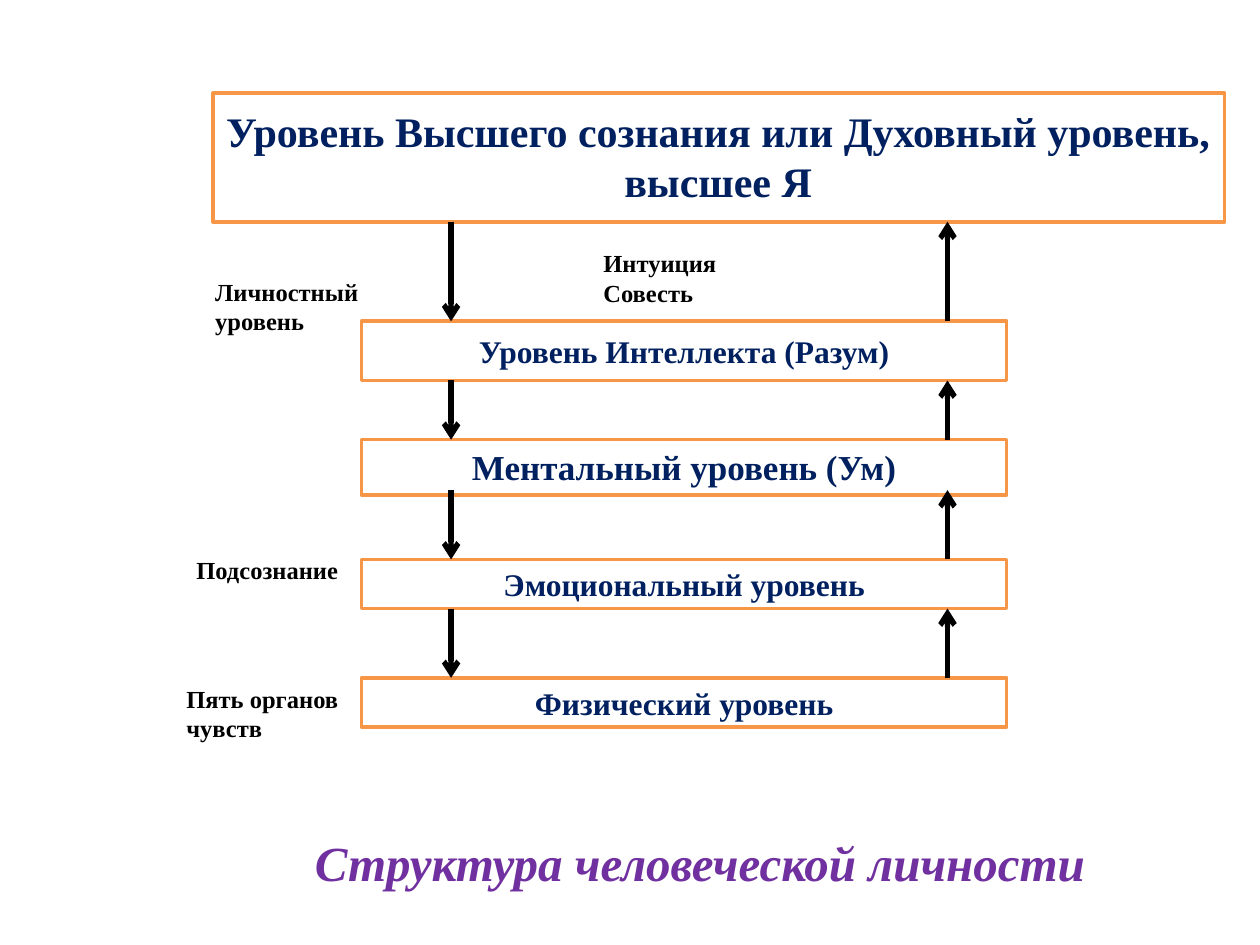
from dataclasses import dataclass

from lxml.etree import SubElement
from pptx import Presentation
from pptx.dml.color import RGBColor
from pptx.enum.shapes import MSO_CONNECTOR as Connector, MSO_SHAPE as Shape
from pptx.enum.text import MSO_ANCHOR as Anchor, PP_ALIGN as Align
from pptx.oxml.ns import qn
from pptx.util import Inches, Pt


@dataclass(frozen=True)
class Theme:
    font: str = "Times New Roman"
    navy: str = "002060"
    orange: str = "F79646"
    purple: str = "7030A0"
    black: str = "000000"
    white: str = "FFFFFF"
    heading: int = 24
    level: int = 18
    mind: int = 20
    label: int = 14
    caption: int = 28
    border: int = 2
    arrow: int = 3


theme = Theme()

# Content: lengths in inches
HEADING = "Уровень Высшего сознания или Духовный уровень, высшее Я"
HEADING_FRAME = (1.69, 0.74, 8.03, 1.02)
HEADING_TEXT = (1.2, 0.61, 9, 1.25)
CAPTION = ("Структура человеческой личности", (2.4, 6.56, 6.61, 0.57))
LEVELS = [  # text, top, height, size, anchor
    ("Уровень Интеллекта (Разум)", 2.55, 0.47, theme.level, Anchor.MIDDLE),
    ("Ментальный уровень (Ум)", 3.49, 0.44, theme.mind, Anchor.TOP),
    ("Эмоциональный уровень", 4.44, 0.39, theme.level, Anchor.MIDDLE),
    ("Физический уровень", 5.38, 0.39, theme.level, Anchor.MIDDLE),
]
LABELS = [
    ("Личностный уровень", (1.61, 2.15, 1.34, 0.57)),
    ("Интуиция\nСовесть", (4.69, 1.92, 1.5, 0.57)),
    ("Подсознание", (1.46, 4.36, 1.34, 0.4)),
    ("Пять органов чувств", (1.38, 5.38, 1.42, 0.57)),
]
LEVEL_LEFT, LEVEL_WIDTH = 2.87, 5.12
DOWN_X, UP_X = 3.58, 7.52
# Gaps between neighbouring levels; arrows overlap the mental level slightly
GAPS = [(1.76, 2.55), (3.02, 3.49), (3.89, 4.44), (4.83, 5.38)]

deck = Presentation()
deck.slide_width, deck.slide_height = Inches(10), Inches(7.5)
page = deck.slides.add_slide(deck.slide_layouts[6])


def color(value):
    return RGBColor.from_string(value)


def write(box, text, size=theme.label, ink=theme.black, italic=False,
          align=Align.LEFT, anchor=Anchor.TOP):
    frame = box.text_frame
    frame.word_wrap = True
    frame.vertical_anchor = anchor
    for index, line in enumerate(text.split("\n")):
        para = frame.add_paragraph() if index else frame.paragraphs[0]
        para.alignment = align
        span = para.add_run()
        span.text = line
        font = span.font
        font.name, font.size, font.bold, font.italic = theme.font, Pt(size), True, italic
        font.color.rgb = color(ink)


def add_text(text, place, **style):
    write(page.shapes.add_textbox(*map(Inches, place)), text, **style)


def add_frame(place):
    box = page.shapes.add_shape(Shape.RECTANGLE, *map(Inches, place))
    box.shadow.inherit = False
    box.fill.solid()
    box.fill.fore_color.rgb = color(theme.white)
    box.line.color.rgb = color(theme.orange)
    box.line.width = Pt(theme.border)
    return box


def add_arrow(x, start, end):
    arrow = page.shapes.add_connector(
        Connector.STRAIGHT, Inches(x), Inches(start), Inches(x), Inches(end))
    arrow.line.color.rgb = color(theme.black)
    arrow.line.width = Pt(theme.arrow)
    SubElement(arrow.line._get_or_add_ln(), qn("a:tailEnd"), type="arrow")
    SubElement(arrow._element.spPr, qn("a:effectLst"))


# Highest level
add_frame(HEADING_FRAME)
add_text(HEADING, HEADING_TEXT, size=theme.heading, ink=theme.navy,
         align=Align.CENTER, anchor=Anchor.MIDDLE)

# Lower levels
for text, top, height, size, anchor in LEVELS:
    box = add_frame((LEVEL_LEFT, top, LEVEL_WIDTH, height))
    write(box, text, size=size, ink=theme.navy, align=Align.CENTER, anchor=anchor)

# Arrows down and up
for upper, lower in GAPS:
    add_arrow(DOWN_X, upper, lower)
    add_arrow(UP_X, lower, upper)

# Side labels and caption
for text, place in LABELS:
    add_text(text, place)
add_text(*CAPTION, size=theme.caption, ink=theme.purple, italic=True)

deck.save("out.pptx")
